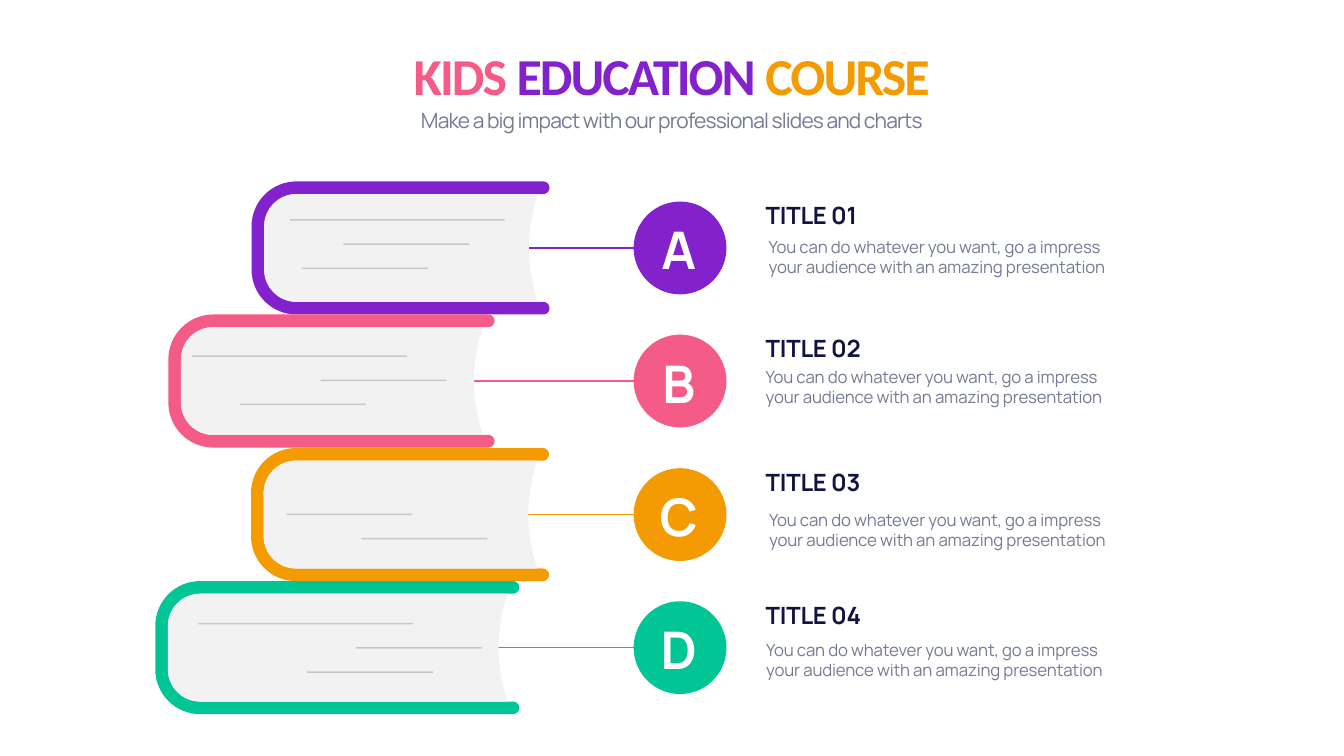
from dataclasses import dataclass
from math import asin, cos, degrees, radians, sin

from lxml.etree import SubElement
from pptx import Presentation
from pptx.dml.color import RGBColor
from pptx.enum.shapes import MSO_CONNECTOR, MSO_SHAPE
from pptx.enum.text import MSO_ANCHOR, MSO_AUTO_SIZE, PP_ALIGN
from pptx.oxml.ns import qn
from pptx.util import Pt

PX = 9144


@dataclass(frozen=True)
class Theme:
    purple: str = "8322CC"
    pink: str = "F55B87"
    orange: str = "F49A02"
    green: str = "02C595"
    page: str = "F2F2F2"
    rule: str = "C4C8CE"
    navy: str = "111340"
    grey: str = "747A94"
    white: str = "FFFFFF"
    font: str = "Manrope"
    heading_font: str = "Calibri"
    display: int = 74
    title: int = 34
    subtitle: int = 30
    body: int = 24


T = Theme()


def arc(cx, cy, radius, start, end, steps=16):
    angles = [radians(start + (end - start) * i / steps) for i in range(steps + 1)]
    return [(cx + radius * cos(a), cy + radius * sin(a)) for a in angles]


def bar(x, y, width, height=3):
    return [(x, y), (x + width, y), (x + width, y + height), (x, y + height)]


def apply(target, values):
    for name, value in values.items():
        setattr(target, name, value)


class Deck:
    def __init__(self, width, height):
        self.prs = Presentation()
        apply(self.prs, {"slide_width": width * PX, "slide_height": height * PX})
        self.s = self.prs.slides.add_slide(self.prs.slide_layouts[6])

    def paint(self, sp, color):
        sp.shadow.inherit = False
        sp.fill.solid()
        sp.fill.fore_color.rgb = RGBColor.from_string(color)
        sp.line.fill.background()

    def outline(self, shapes, contours, color):
        first, *others = [[(x * PX, y * PX) for x, y in c] for c in contours]
        fb = shapes.build_freeform(*first[0])
        fb.add_line_segments(first[1:], close=True)
        for points in others:
            fb.move_to(*points[0])
            fb.add_line_segments(points[1:], close=True)
        self.paint(fb.convert_to_shape(), color)

    def line(self, x1, x2, y, color, width=2):
        c = self.s.shapes.add_connector(MSO_CONNECTOR.STRAIGHT, x1 * PX, y * PX, x2 * PX, y * PX)
        c.line.color.rgb = RGBColor.from_string(color)
        c.line.width = Pt(width)
        SubElement(c._element.spPr, qn("a:effectLst"))

    def circle(self, x, y, size, color):
        sp = self.s.shapes.add_shape(MSO_SHAPE.OVAL, x * PX, y * PX, size * PX, size * PX)
        self.paint(sp, color)

    def book(self, left, right, top, color, rule_top, rules):
        shapes = self.s.shapes.add_group_shape().shapes
        height, band, radius = 264, 25, 89
        bottom, mid, inner, cap = top + height, top + height / 2, radius - band, band / 2
        cx, upper, lower = left + radius, top + radius, bottom - radius
        cover = (
            arc(cx, lower, radius, 90, 180)
            + arc(cx, upper, radius, 180, 270)
            + arc(right - cap, top + cap, cap, -90, 90)
            + arc(cx, upper, inner, 270, 180)
            + arc(cx, lower, inner, 180, 90)
            + arc(right - cap, bottom - cap, cap, -90, 90)
        )
        self.outline(shapes, [cover], color)
        bend = 327
        sweep = degrees(asin((height / 2 - band) / bend))
        pages = (
            arc(cx, lower, inner, 90, 180)
            + arc(cx, upper, inner, 180, 270)
            + arc(right - 41 + bend, mid, bend, 180 + sweep, 180 - sweep)
        )
        self.outline(shapes, [pages], T.page)
        bars = [bar(x, top + rule_top + 48 * i, length) for i, (x, length) in enumerate(rules)]
        self.outline(shapes, bars, T.rule)

    def text(self, box, runs, size, spacing, font=T.font, bold=False,
             anchor=MSO_ANCHOR.TOP, align=PP_ALIGN.LEFT, leading=None):
        tf = self.s.shapes.add_textbox(*(v * PX for v in box)).text_frame
        apply(tf, {"word_wrap": True, "vertical_anchor": anchor,
                   "auto_size": MSO_AUTO_SIZE.SHAPE_TO_FIT_TEXT})
        p = tf.paragraphs[0]
        p.alignment = align
        if leading:
            p.line_spacing = Pt(leading)
        for words, color in runs:
            r = p.add_run()
            r.text = words
            apply(r.font, {"name": font, "size": Pt(size), "bold": bold})
            r.font.color.rgb = RGBColor.from_string(color)
            r.font._element.set("spc", str(spacing))


BODY = "You can do whatever you want, go a impress your audience with an amazing presentation"
BOOKS = [
    ("A", T.purple, 499, 1090, 75, [(575, 426), (681, 250), (599, 250)], (1515, 104)),
    ("B", T.pink, 334, 981, 81, [(381, 426), (636, 250), (476, 250)], (1509, 98)),
    ("C", T.orange, 498, 1089, 130, [(568, 250), (717, 250)], (1516, 117)),
    ("D", T.green, 308, 1030, 83, [(393, 426), (706, 250), (609, 250)], (1510, 111)),
]


def main():
    deck = Deck(2666, 1500)
    center, middle, base = PP_ALIGN.CENTER, MSO_ANCHOR.MIDDLE, MSO_ANCHOR.BOTTOM
    deck.text((166, 76, 2333, 138),
              [("KIDS ", T.pink), ("EDUCATION", T.purple), (" COURSE", T.orange)],
              T.display, -290, T.heading_font, True, base, center, 94)
    deck.text((166, 201, 2333, 66),
              [("Make a big impact with our professional slides and charts", T.grey)],
              T.subtitle, -120, align=center, leading=42)
    for i, (letter, color, left, right, rule_top, rules, (x, dy)) in enumerate(BOOKS):
        top = 360 + 529 * i // 2
        deck.line(right - 45, 1348, top + 132, color)
        deck.circle(1257, top + 40, 184, color)
        deck.book(left, right, top, color, rule_top, rules)
        deck.text((1280, top + 67, 133, 135), [(letter, T.white)],
                  T.display, -290, bold=True, anchor=middle, align=center)
        deck.text((1509, top + 33, 863, 67), [(f"TITLE {i + 1:02}", T.navy)],
                  T.title, -30, bold=True, anchor=base)
        deck.text((x, top + dy, 716, 91), [(BODY, T.grey)], T.body, -20)
    deck.prs.save("out.pptx")


if __name__ == "__main__":
    main()
